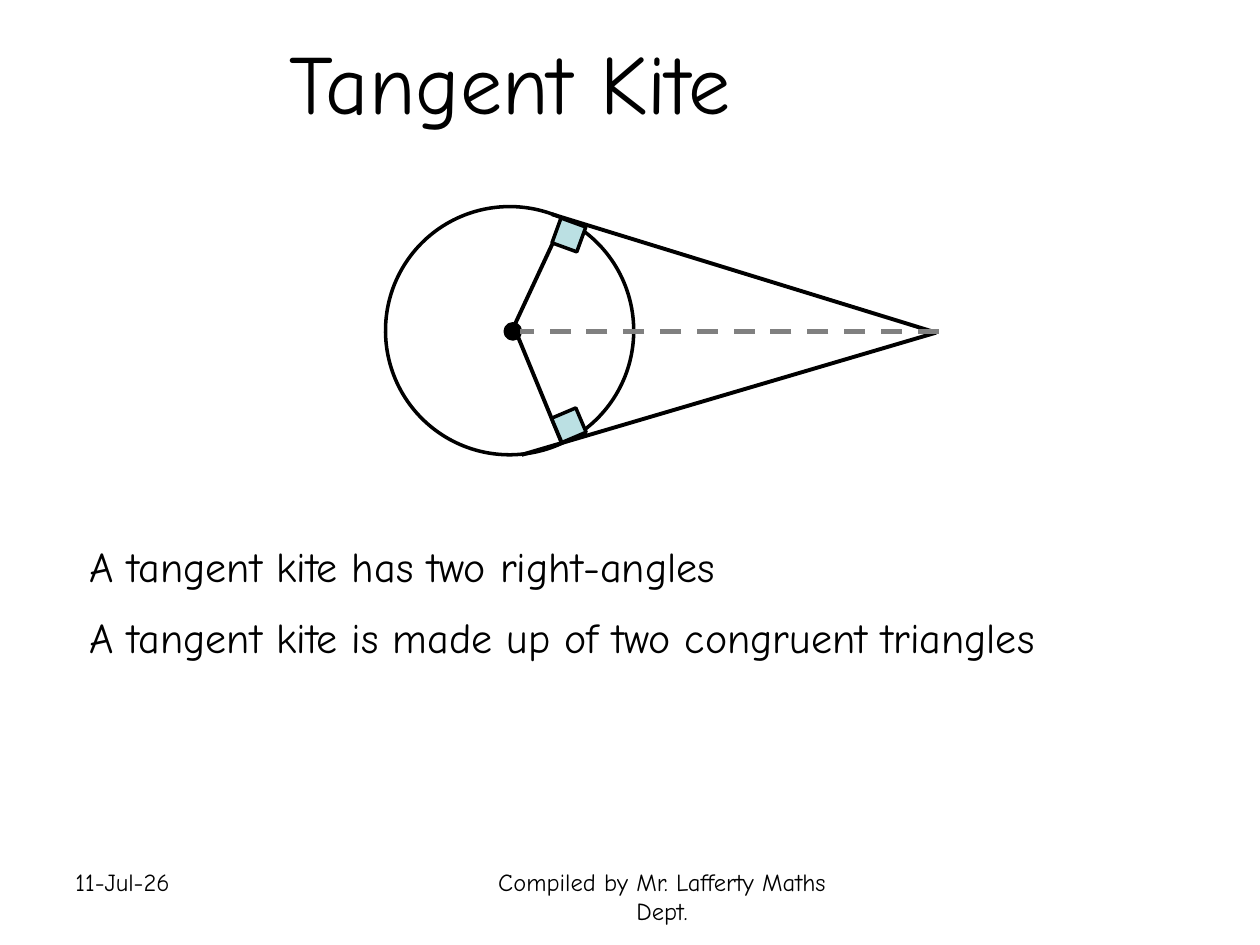
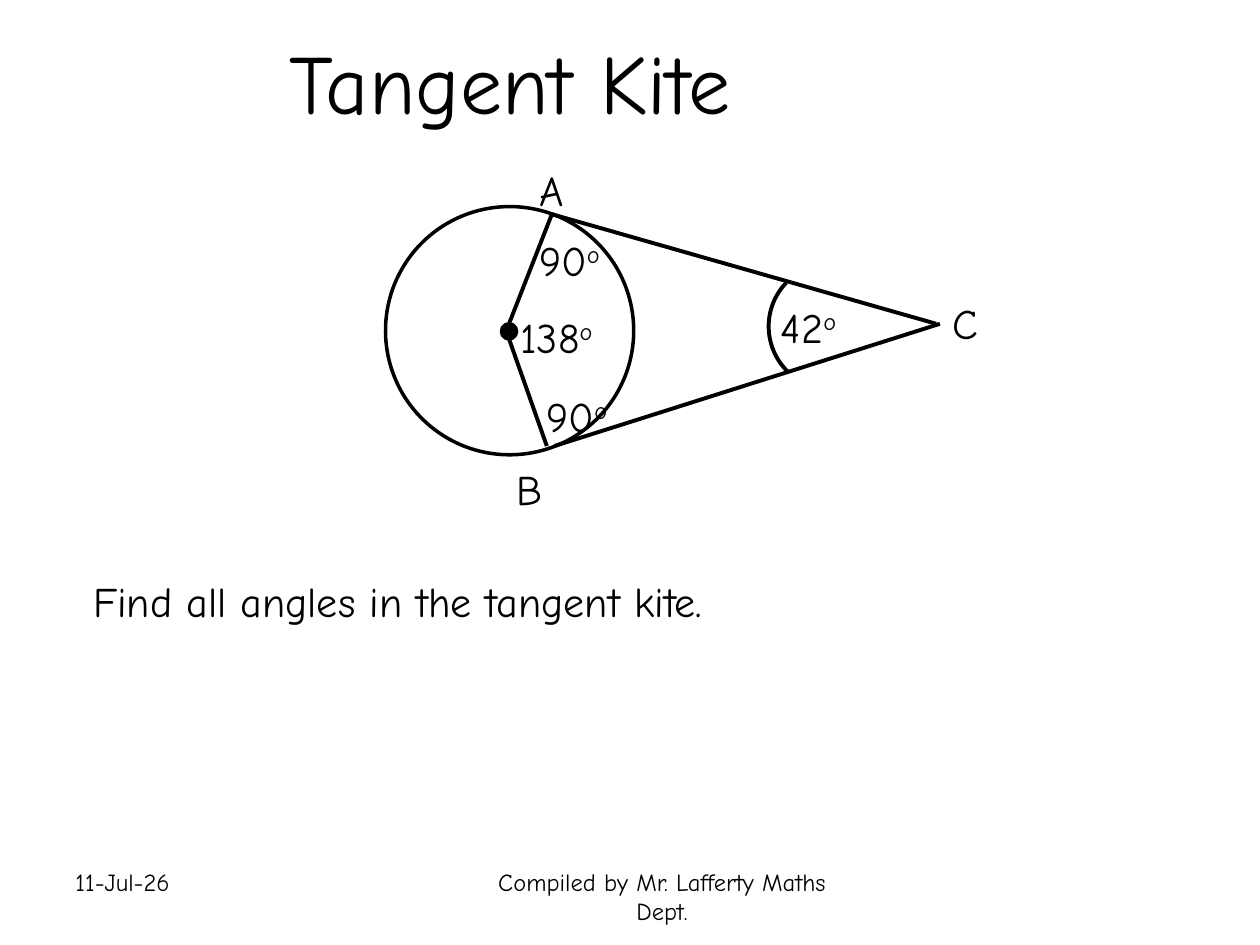
from lxml import etree
from pptx import Presentation
from pptx.dml.color import RGBColor
from pptx.enum.dml import MSO_LINE
from pptx.enum.shapes import MSO_CONNECTOR, MSO_SHAPE
from pptx.enum.text import MSO_ANCHOR, MSO_AUTO_SIZE, PP_ALIGN
from pptx.oxml.ns import qn
from pptx.util import Inches, Pt

COLUMNS, ROWS = 100, 75
CELL = Inches(0.1)
FONT = "Comic Neue"
BLACK, GREY, PALE_BLUE = "000000", "808080", "BBE0E3"
TITLE_SIZE, TEXT_SIZE, FOOTER_SIZE = 48, 24, 14
CIRCLE_BOX = (30.6, 16.4, 19.7, 19.7)
DOT_WIDTH, CORNER_WIDTH = 1.2, 2.1
DOT_TOP = 25.7


def rgb(colour):
    return RGBColor.from_string(colour)


def cells(*counts):
    return [round(count * CELL) for count in counts]


def place(shape, box):
    shape.left, shape.top, shape.width, shape.height = cells(*box)


def add_run(paragraph, text, size, raised=False):
    run = paragraph.add_run()
    run.text = text
    run.font.name = FONT
    run.font.size = Pt(size)
    run.font.color.rgb = rgb(BLACK)
    if raised:
        run.font._element.set("baseline", "30000")


def prepare_frame(shape):
    frame = shape.text_frame
    frame.word_wrap = True
    frame.auto_size = MSO_AUTO_SIZE.NONE
    frame.vertical_anchor = MSO_ANCHOR.TOP
    return frame


def add_text(slide, box, text, size=TEXT_SIZE, align=PP_ALIGN.LEFT):
    shape = slide.shapes.add_textbox(*cells(*box))
    paragraph = prepare_frame(shape).paragraphs[0]
    paragraph.alignment = align
    add_run(paragraph, text, size)
    return paragraph


def add_angle(slide, box, degrees):
    add_run(add_text(slide, box, degrees), "o", TEXT_SIZE, raised=True)


def add_shape(slide, kind, box, fill=None, rotation=0, width=2):
    shape = slide.shapes.add_shape(kind, *cells(*box))
    shape.shadow.inherit = False
    shape.rotation = rotation
    if fill:
        shape.fill.solid()
        shape.fill.fore_color.rgb = rgb(fill)
    else:
        shape.fill.background()
    shape.line.color.rgb = rgb(BLACK)
    shape.line.width = Pt(width)


def add_line(slide, start, end, colour=BLACK, width=2.25, dash=None):
    line = slide.shapes.add_connector(MSO_CONNECTOR.STRAIGHT, *cells(*start, *end))
    line.line.color.rgb = rgb(colour)
    line.line.width = Pt(width)
    if dash:
        line.line.dash_style = dash
    etree.SubElement(line._element.spPr, qn("a:effectLst"))


def set_title(slide, text):
    title = slide.shapes.title
    place(title, (22, 1.9, 42.4, 9.1))
    paragraph = prepare_frame(title).paragraphs[0]
    paragraph.alignment = PP_ALIGN.LEFT
    add_run(paragraph, text, TITLE_SIZE)


def set_statements(slide, box, statements):
    body = slide.placeholders[1]
    place(body, box)
    frame = prepare_frame(body)
    for index, statement in enumerate(statements):
        paragraph = frame.add_paragraph() if index else frame.paragraphs[0]
        properties = paragraph._p.get_or_add_pPr()
        properties.set("marL", "0")
        properties.set("indent", "0")
        etree.SubElement(properties, qn("a:buNone"))
        paragraph.space_before = Pt(12 if index else 0)
        add_run(paragraph, statement, TEXT_SIZE)


def add_footer(slide):
    add_text(slide, (5, 68.3, 23.3, 5.2), "11-Jul-26", FOOTER_SIZE)
    add_text(slide, (36.7, 68.3, 31.7, 5), "Compiled by Mr. Lafferty Maths Dept.",
             FOOTER_SIZE, PP_ALIGN.CENTER)


def add_kite(slide, tangents, dot_left, radii):
    add_shape(slide, MSO_SHAPE.OVAL, CIRCLE_BOX, rotation=19.9)
    for start, end in tangents:
        add_line(slide, start, end)
    add_shape(slide, MSO_SHAPE.OVAL, (dot_left, DOT_TOP, DOT_WIDTH, DOT_WIDTH), BLACK)
    for start, end in radii:
        add_line(slide, start, end)


def start_slide(presentation, statement_box, statements):
    slide = presentation.slides.add_slide(presentation.slide_layouts[1])
    set_title(slide, "Tangent Kite")
    set_statements(slide, statement_box, statements)
    add_footer(slide)
    return slide


def build_properties_slide(presentation):
    slide = start_slide(presentation, (6.1, 42.4, 85.6, 10.7), [
        "A tangent kite has two right-angles",
        "A tangent kite is made up of two congruent triangles",
    ])
    tip = (74.3, 26.4)
    add_kite(slide,
             tangents=[((43.8, 17), tip), ((41.4, 36.1), tip)],
             dot_left=40.1,
             radii=[((44.8, 17.3), (40.7, 26.1)), ((41.1, 26.7), (44.6, 35.2))])
    for top, rotation in ((17.6, 20), (32.7, 337)):
        add_shape(slide, MSO_SHAPE.RECTANGLE, (44.1, top, CORNER_WIDTH, CORNER_WIDTH),
                  PALE_BLUE, rotation)
    add_line(slide, (74.5, 26.3), (41.3, 26.3), GREY, 3, MSO_LINE.DASH)


def build_angles_slide(presentation):
    slide = start_slide(presentation, (6.4, 45.2, 55.2, 5.1),
                        ["Find all angles in the tangent kite."])
    point_a = (43.8, 17)
    add_kite(slide,
             tangents=[(point_a, (74.3, 25.7)), ((44, 35.4), (74.6, 25.7))],
             dot_left=39.8,
             radii=[(point_a, (40.4, 25.7)), ((40.4, 26.9), (43.4, 35.4))])
    add_shape(slide, MSO_SHAPE.ARC, (61, 20.9, 10, 10), rotation=223.9, width=2.25)
    for degrees, left, top, width in (("42", 61, 23.4, 7.3), ("90", 41.8, 18.1, 7.3),
                                      ("90", 42.4, 30.5, 7.3), ("138", 40.3, 24.2, 8.8)):
        add_angle(slide, (left, top, width, 5), degrees)
    for letter, left, top, width in (("A", 41.8, 12.6, 4.5), ("B", 40, 36.3, 4.1),
                                     ("C", 74.6, 23.1, 3.2)):
        add_text(slide, (left, top, width, 5), letter)


def main():
    presentation = Presentation()
    presentation.slide_width, presentation.slide_height = cells(COLUMNS, ROWS)
    build_properties_slide(presentation)
    build_angles_slide(presentation)
    presentation.save("out.pptx")


if __name__ == "__main__":
    main()
